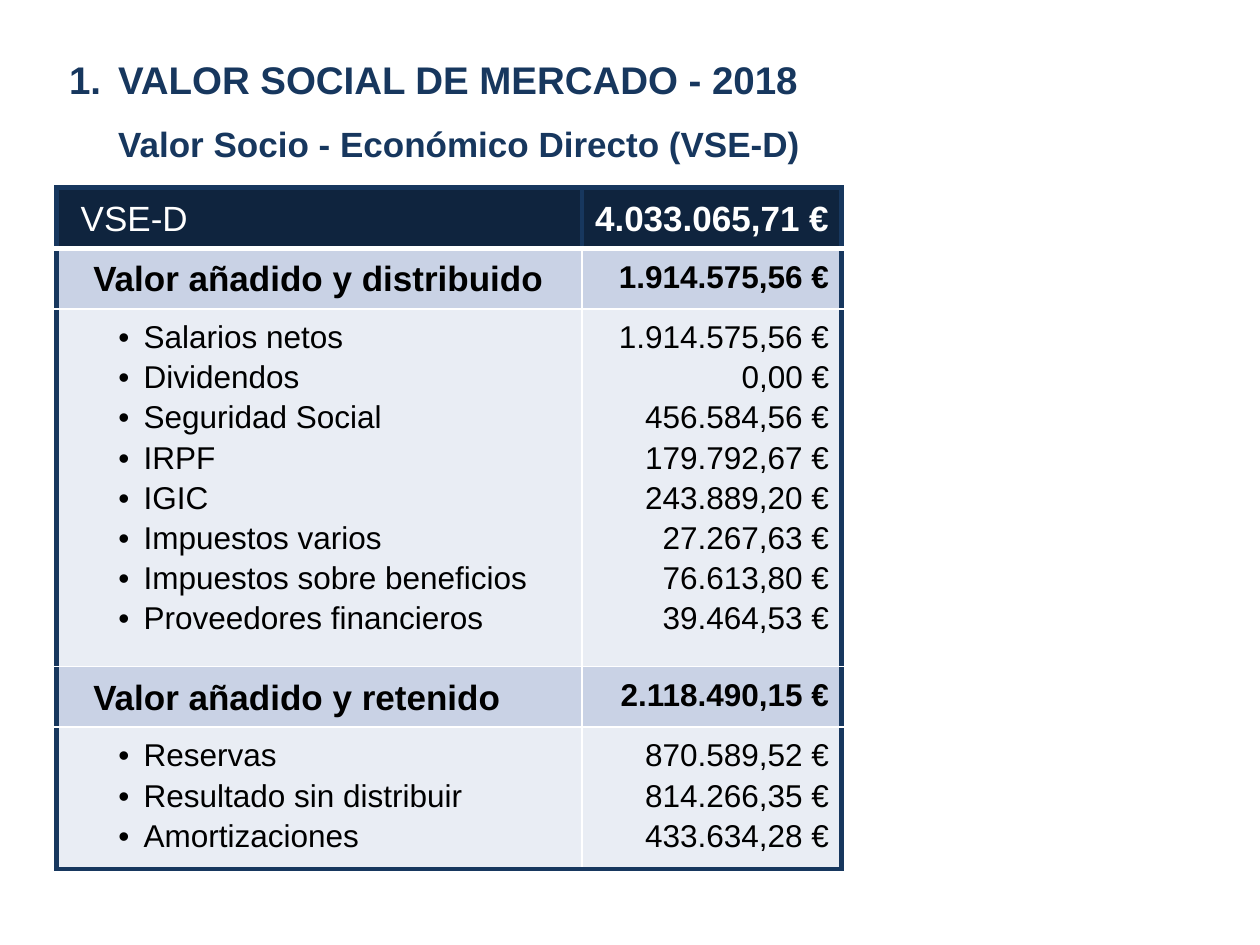
from lxml.etree import SubElement as Sub
from pptx import Presentation
from pptx.dml.color import RGBColor as Rgb
from pptx.enum.text import PP_ALIGN as Align
from pptx.oxml.ns import qn
from pptx.util import Inches as In, Pt

HUES = {"navy": "17375E", "head": "0F243E", "group": "C9D2E5",
        "list": "E9EDF4", "white": "FFFFFF", "black": "000000"}
WIDE, HIGH = 10, 7.5
LEFT = 0.045 * WIDE
COLS = (4.17, 2.06)

# Format of each kind of row: fill, label font, value font, label indent
KINDS = {
    "head": {"label": {"size": Pt(20), "bold": False},
             "value": {"size": Pt(20), "bold": True},
             "hue": "white", "inset": (0.09, 0)},
    "group": {"label": {"size": Pt(20), "bold": True},
              "value": {"size": Pt(18), "bold": True},
              "hue": "black", "inset": (0, 0.19)},
    "list": {"label": {"size": Pt(18), "bold": False},
             "value": {"size": Pt(18), "bold": False},
             "hue": "black", "inset": (0.59, -0.2)},
}

# Kind, height and the pairs of label and value
ROWS = [
    ("head", 0.48, [("VSE-D", "4.033.065,71 €")]),
    ("group", 0.48, [("Valor añadido y distribuido", "1.914.575,56 €")]),
    ("list", 2.84, [
        ("Salarios netos", "1.914.575,56 €"),
        ("Dividendos", "0,00 €"),
        ("Seguridad Social", "456.584,56 €"),
        ("IRPF", "179.792,67 €"),
        ("IGIC", "243.889,20 €"),
        ("Impuestos varios", "27.267,63 €"),
        ("Impuestos sobre beneficios", "76.613,80 €"),
        ("Proveedores financieros", "39.464,53 €")]),
    ("group", 0.48, [("Valor añadido y retenido", "2.118.490,15 €")]),
    ("list", 1.12, [
        ("Reservas", "870.589,52 €"),
        ("Resultado sin distribuir", "814.266,35 €"),
        ("Amortizaciones", "433.634,28 €")]),
]


def paint(hue):
    return Rgb.from_string(HUES[hue])


def set_all(item, form):
    for name, value in form.items():
        setattr(item, name, value)


def indent(para, inset, mark=None):
    """Set left margin and first-line indent; mark is a bullet tag with its attributes."""
    props = para._p.get_or_add_pPr()
    for name, size in zip(("marL", "indent"), inset):
        props.set(name, str(In(size)))
    if mark:
        tag, attrs = mark
        Sub(props, qn("a:buFont"), typeface="Arial")
        Sub(props, qn(tag), **attrs)


def write(frame, lines, font, hue, form, inset=(0, 0), mark=None):
    """Fill a text frame with one paragraph per line."""
    for i, line in enumerate(lines):
        para = frame.add_paragraph() if i else frame.paragraphs[0]
        set_all(para, form)
        indent(para, inset, mark)
        run = para.add_run()
        run.text = line
        set_all(run.font, {"name": "Arial", **font})
        run.font.color.rgb = paint(hue)


def edge(cell, sides):
    """Draw borders, each side given as (hue, points); they go ahead of the fill."""
    props = cell._tc.get_or_add_tcPr()
    for i, (side, (hue, width)) in enumerate(sides.items()):
        line = Sub(props, qn(f"a:ln{side}"), w=str(Pt(width)))
        Sub(Sub(line, qn("a:solidFill")), qn("a:srgbClr"), val=HUES[hue])
        props.insert(i, line)


def sides(row, col):
    thick, thin = ("navy", 3), ("white", 1)
    if row == 0:
        return {"L": thick, "R": thick, "T": thick, "B": ("white", 3)}
    last = row == len(ROWS) - 1
    return {"L": thin if col else thick, "R": thick if col else thin,
            "T": thin, "B": thick if last else thin}


def add_title(slide):
    box = slide.shapes.add_textbox(In(LEFT), In(0.21), In(10.14), In(1.1))
    frame = box.text_frame
    frame.word_wrap = True
    write(frame, ["VALOR SOCIAL DE MERCADO - 2018"],
          {"size": Pt(22), "bold": True}, "navy", {"line_spacing": 1.5},
          (0.39, -0.39), ("a:buAutoNum", {"type": "arabicPeriod"}))
    para = frame.add_paragraph()
    para.line_spacing = 1.5
    indent(para, (0, 0.39))
    run = para.add_run()
    run.text = "Valor Socio - Económico Directo (VSE-D)"
    set_all(run.font, {"name": "Arial", "size": Pt(20), "bold": True})
    run.font.color.rgb = paint("navy")


def add_values(slide):
    high = sum(row[1] for row in ROWS)
    table = slide.shapes.add_table(len(ROWS), len(COLS), In(LEFT), In(1.49),
                                   In(sum(COLS)), In(high)).table
    for col, width in zip(table.columns, COLS):
        col.width = In(width)
    for r, (kind, height, pairs) in enumerate(ROWS):
        table.rows[r].height = In(height)
        look = KINDS[kind]
        mark = ("a:buChar", {"char": "•"}) if kind == "list" else None
        labels, values = zip(*pairs)
        write(table.cell(r, 0).text_frame, labels, look["label"], look["hue"],
              {"line_spacing": 1.14}, look["inset"], mark)
        write(table.cell(r, 1).text_frame, values, look["value"], look["hue"],
              {"line_spacing": 1.14, "alignment": Align.RIGHT})
        for c in range(len(COLS)):
            cell = table.cell(r, c)
            cell.fill.solid()
            cell.fill.fore_color.rgb = paint(kind)
            edge(cell, sides(r, c))


def main():
    deck = Presentation()
    set_all(deck, {"slide_width": In(WIDE), "slide_height": In(HIGH)})
    slide = deck.slides.add_slide(deck.slide_layouts[6])
    add_title(slide)
    add_values(slide)
    deck.save("out.pptx")


if __name__ == "__main__":
    main()
